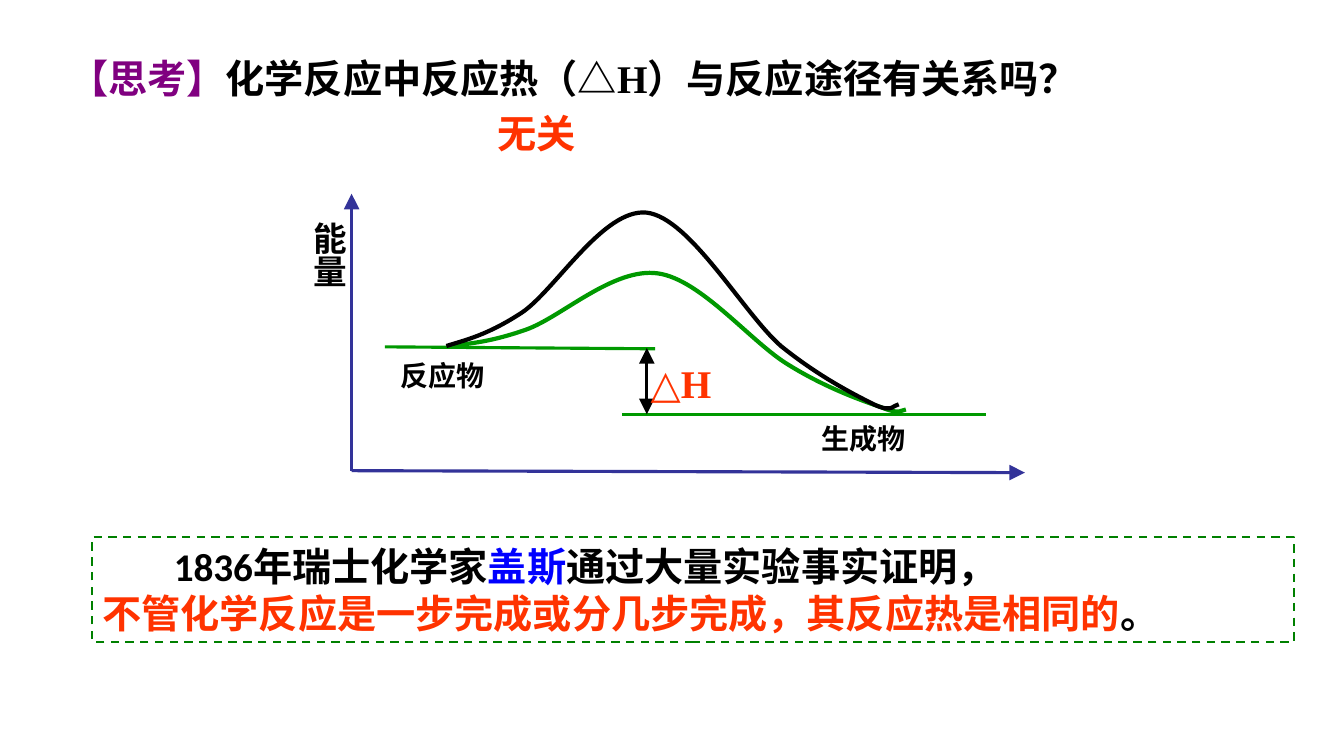
from lxml.etree import SubElement
from pptx import Presentation
from pptx.dml.color import RGBColor
from pptx.enum.dml import MSO_LINE
from pptx.enum.shapes import MSO_CONNECTOR, MSO_SHAPE
from pptx.enum.text import MSO_ANCHOR, PP_ALIGN
from pptx.oxml.ns import qn
from pptx.util import Cm, Pt

BLACK = RGBColor(0x00, 0x00, 0x00)
PURPLE = RGBColor(0x80, 0x00, 0x80)
ORANGE = RGBColor(0xFF, 0x33, 0x00)
BLUE = RGBColor(0x00, 0x00, 0xFF)
AXIS_BLUE = RGBColor(0x33, 0x33, 0x99)
CURVE_GREEN = RGBColor(0x00, 0x99, 0x00)
FRAME_GREEN = RGBColor(0x00, 0x80, 0x00)
LATIN, SERIF, CJK = "Calibri", "Times New Roman", "Noto Sans CJK SC"

CATALYSED_PATH = [
    (2.44, 3.84), (3.00, 3.78), (3.53, 3.73), (4.39, 3.43),
    (5.28, 3.12), (6.60, 1.85), (7.72, 2.01), (8.81, 2.16),
    (10.08, 3.76), (11.02, 4.32), (11.96, 4.90), (12.85, 5.21),
    (13.34, 5.38), (13.84, 5.59), (13.87, 5.44), (13.97, 5.44)]
DIRECT_PATH = [
    (2.39, 3.84), (2.90, 3.68), (3.43, 3.56), (4.29, 3.00),
    (5.13, 2.44), (6.35, 0.36), (7.44, 0.48), (8.53, 0.61),
    (9.88, 3.02), (10.82, 3.84), (11.79, 4.62), (12.65, 5.05),
    (13.16, 5.31), (13.64, 5.54), (13.67, 5.31), (13.79, 5.31)]


def add_run(paragraph, words, color, font=LATIN, size=28, chinese_font=None):
    """Append one bold run; Chinese uses the Latin typeface unless named."""
    run = paragraph.add_run()
    run.text = words
    run.font.size, run.font.bold, run.font.name = Pt(size), True, font
    run.font.color.rgb = color
    SubElement(run.font._element, qn("a:ea"), typeface=chinese_font or font)


def add_label(slide, box, words, color, font=LATIN, size=28):
    """Place a one-run text box in a box given in centimetres."""
    label = slide.shapes.add_textbox(*map(Cm, box))
    label.text_frame.word_wrap = True
    add_run(label.text_frame.paragraphs[0], words, color, font, size)
    return label


def add_line(slide, start, end, color, arrowheads=()):
    """Draw a straight line, with large triangles at the named ends."""
    line = slide.shapes.add_connector(
        MSO_CONNECTOR.STRAIGHT, *map(Cm, (*start, *end)))
    line.line.color.rgb, line.line.width = color, Pt(2.25)
    for end_tag in arrowheads:
        SubElement(line.line._get_or_add_ln(), qn(end_tag),
                   type="triangle", w="lg", len="lg")
    SubElement(line._element.spPr, qn("a:effectLst"))


def add_curve(slide, knots, color):
    """Draw an open energy curve, three knots to each Bezier segment."""
    points = [(Cm(x), Cm(y)) for x, y in knots]
    builder = slide.shapes.build_freeform(*points[0])
    builder.add_line_segments(points[1:], close=False)
    curve = builder.convert_to_shape()
    outline = next(curve._element.iter(qn("a:path")))
    segments = outline.findall(qn("a:lnTo"))
    for first in range(0, len(segments), 3):
        bend = SubElement(outline, qn("a:cubicBezTo"))
        for segment in segments[first:first + 3]:
            bend.append(segment[0])
            outline.remove(segment)
    curve.fill.background()
    curve.line.color.rgb, curve.line.width = color, Pt(3)
    curve.shadow.inherit = False


def add_question(slide, left, top, width, height):
    """Fill the title with the question and put its answer below."""
    question = slide.shapes.title
    question.left, question.top = Cm(left), Cm(top)
    question.width, question.height = Cm(width), Cm(height)
    frame = question.text_frame
    frame.vertical_anchor = MSO_ANCHOR.TOP
    paragraph = frame.paragraphs[0]
    paragraph.alignment = PP_ALIGN.LEFT
    add_run(paragraph, "【思考】", PURPLE)
    add_run(paragraph, "化学反应中反应热（", BLACK)
    add_run(paragraph, "△H）", BLACK, SERIF, chinese_font=LATIN)
    add_run(paragraph, "与反应途径有关系吗？", BLACK)
    add_label(slide, (left + 10.8, top + 1.38, 3.61, height), "无关", ORANGE)


def add_energy_diagram(slide, left, top, width, height):
    """Draw axes, energy levels, both reaction paths and the heat arrow."""
    def at(x, y):
        return left + x, top + y

    origin = at(0, height)
    add_line(slide, origin, at(0, 0), AXIS_BLUE, ["a:tailEnd"])
    add_line(slide, origin, at(width, height + 0.05), AXIS_BLUE, ["a:tailEnd"])
    energy = add_label(slide, (*at(-1.47, 0.46), 1.55, 2.82),
                       "能量", BLACK, CJK, 24)
    energy.text_frame._txBody.bodyPr.set("vert", "eaVert")
    add_line(slide, at(0.84, 3.86), at(7.65, 3.91), CURVE_GREEN)
    add_line(slide, at(6.81, 5.56), at(16, 5.56), CURVE_GREEN)
    for words, x, y in (("生成物", 11.59, 5.61), ("反应物", 0.99, 4.04)):
        add_label(slide, (*at(x, y), 2.79, 1.09), words, BLACK, CJK, 20)
    for knots, color in ((CATALYSED_PATH, CURVE_GREEN), (DIRECT_PATH, BLACK)):
        add_curve(slide, [at(x, y) for x, y in knots], color)
    add_line(slide, at(7.44, 3.89), at(7.44, 5.56), BLACK,
             ["a:headEnd", "a:tailEnd"])
    add_label(slide, (*at(7.29, 4.06), 2.26, 1.45), "△H", ORANGE, SERIF)


def add_conclusion(slide, left, top, width, height):
    """Write the law of constant heat in a dashed frame."""
    conclusion = slide.shapes.add_shape(
        MSO_SHAPE.RECTANGLE, *map(Cm, (left, top, width, height)))
    conclusion.shadow.inherit = False
    conclusion.fill.background()
    conclusion.line.color.rgb, conclusion.line.width = FRAME_GREEN, Pt(1.5)
    conclusion.line.dash_style = MSO_LINE.DASH
    frame = conclusion.text_frame
    frame.word_wrap = True
    frame.vertical_anchor = MSO_ANCHOR.TOP
    history, law = frame.paragraphs[0], frame.add_paragraph()
    history.alignment = law.alignment = PP_ALIGN.LEFT
    history._p.get_or_add_pPr().set("indent", str(Cm(1.8)))
    add_run(history, "1836年瑞士化学家", BLACK)
    add_run(history, "盖斯", BLUE)
    add_run(history, "通过大量实验事实证明，", BLACK)
    add_run(law, "不管化学反应是一步完成或分几步完成，其反应热是相同的", ORANGE)
    add_run(law, "。", BLACK)


def main():
    """Build the slide and save it."""
    deck = Presentation()
    deck.slide_width, deck.slide_height = Cm(33.87), Cm(19.05)
    slide = deck.slides.add_slide(deck.slide_layouts[5])
    add_question(slide, 1.49, 1.25, 31.32, 1.45)
    add_conclusion(slide, 2.33, 13.54, 30.28, 2.64)
    add_energy_diagram(slide, 8.86, 4.88, 16.97, 6.98)
    deck.save("out.pptx")


if __name__ == "__main__":
    main()
